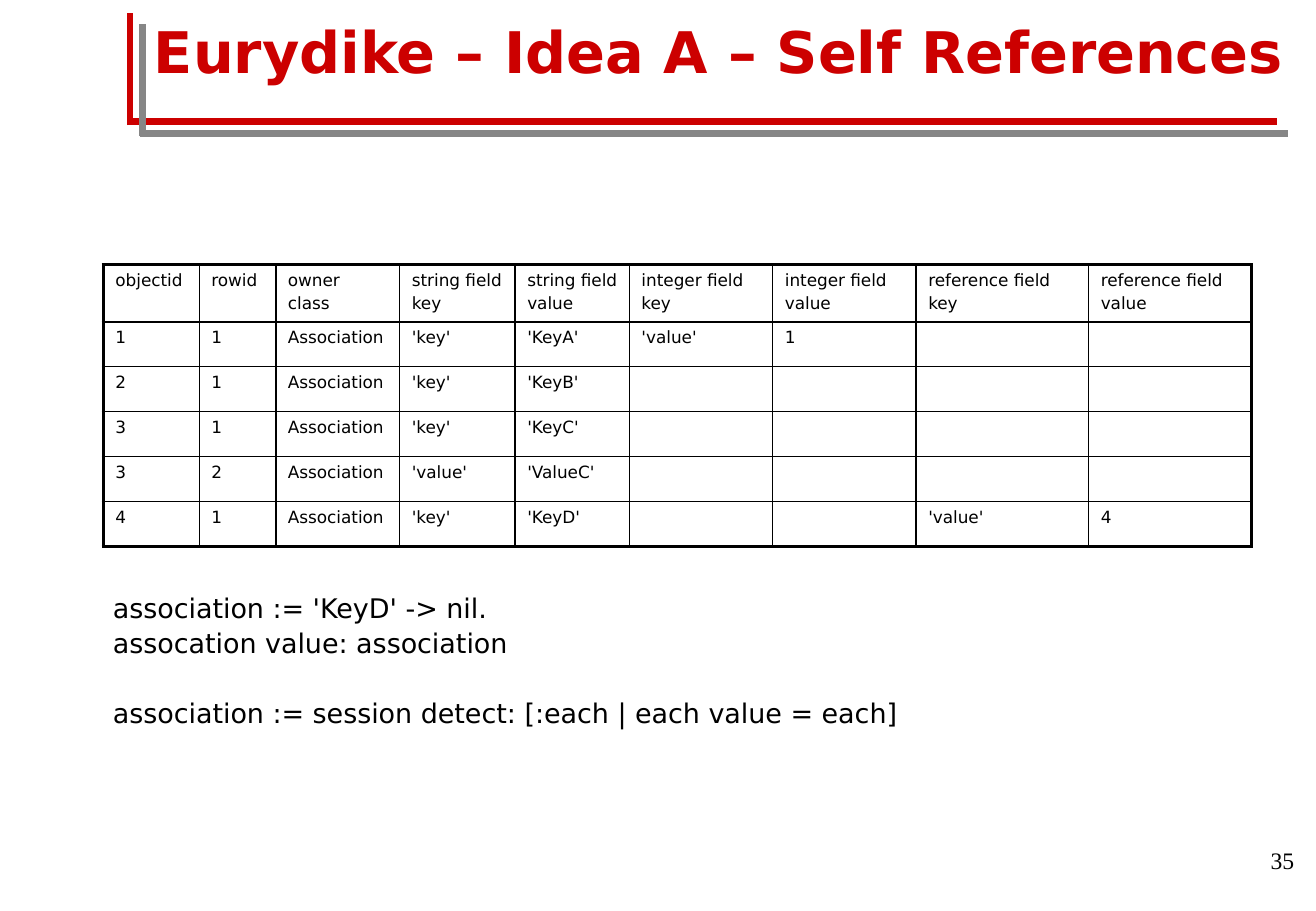
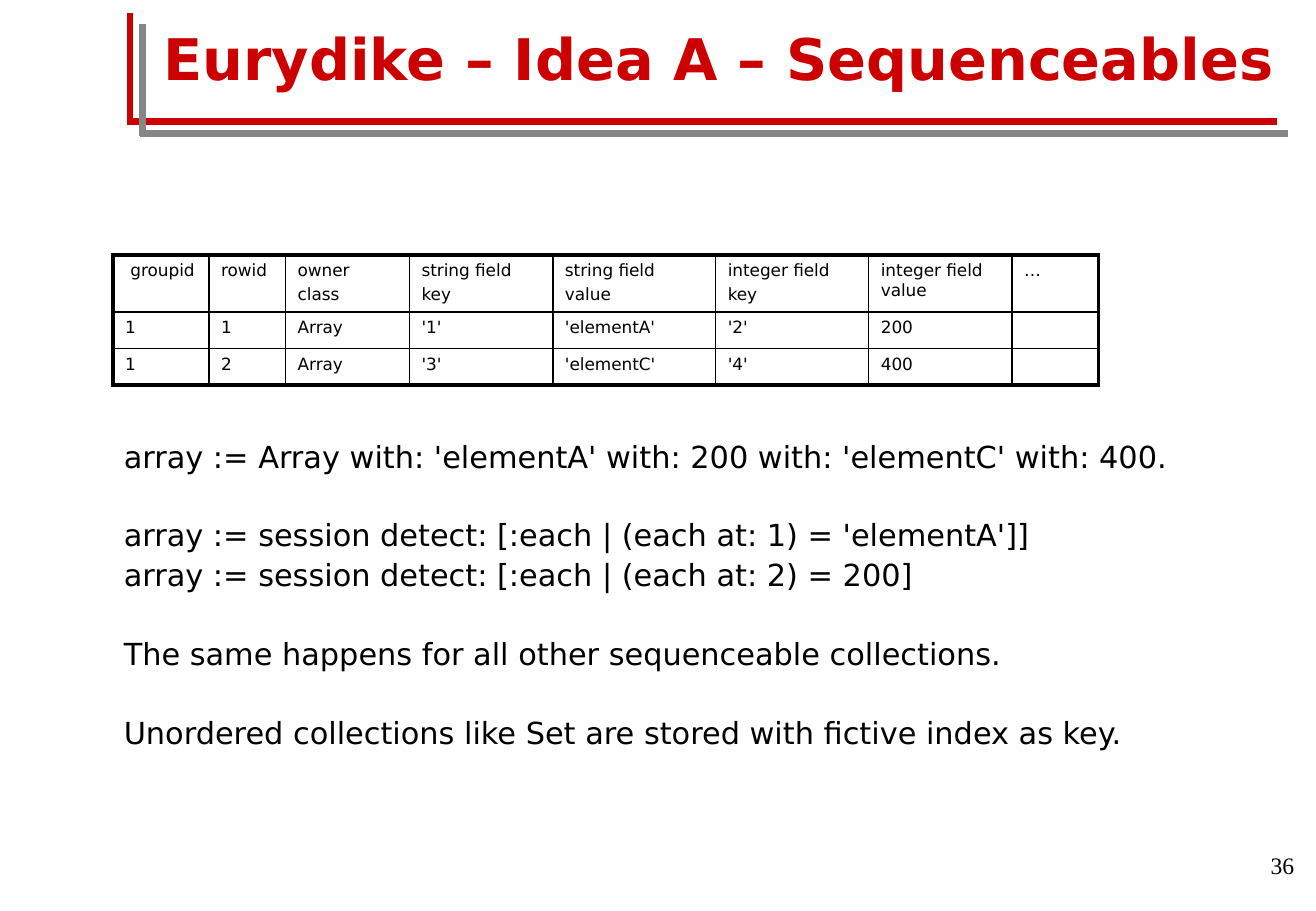
"""Builds two slides on storing object collections in table rows."""
from lxml import etree
from pptx import Presentation
from pptx import util as u
from pptx.dml.color import RGBColor
from pptx.enum import shapes, text
from pptx.oxml.ns import qn

RED = RGBColor(0xCC, 0x00, 0x00)
GRAY = RGBColor(0x86, 0x86, 0x86)
BLACK = RGBColor(0x00, 0x00, 0x00)
SANS, SERIF = "DejaVu Sans", "Times New Roman"
PX_PER_INCH = 100
THICK, THIN = 2.25, 1
LINE_GAP, BLOCK_GAP = 0.23, 1.51
FRAME = [
    (RED, (106, 100), (1051, 100)),
    (RED, (107, 103), (107, 11)),
    (GRAY, (115, 110), (1060, 110)),
    (GRAY, (117, 112), (117, 20)),
]
TITLE = {"name": SANS, "size": u.Pt(34), "bold": True}
NUMBER = {"name": SERIF, "size": u.Pt(14)}
CELL = {"name": SANS, "size": u.Pt(10)}


def px(length):
    return u.Emu(length * u.Inches(1) // PX_PER_INCH)


class Deck:
    def __init__(self, width, height):
        self.prs = Presentation()
        self.prs.slide_width, self.prs.slide_height = px(width), px(height)
        self.slide = None

    def add_slide(self):
        self.slide = self.prs.slides.add_slide(self.prs.slide_layouts[6])
        for color, start, end in FRAME:
            self.line(color, start, end)

    def line(self, color, start, end):
        rule = self.slide.shapes.add_connector(
            shapes.MSO_CONNECTOR.STRAIGHT, *map(px, start + end))
        rule.line.color.rgb = color
        rule.line.width = u.Pt(4)
        etree.SubElement(rule._element.spPr, qn("a:effectLst"))

    def style(self, paragraph, font, color=BLACK):
        for run in paragraph.runs:
            for key, value in font.items():
                setattr(run.font, key, value)
            run.font.color.rgb = color

    def text_frame(self, box, anchor=text.MSO_ANCHOR.TOP):
        frame = self.slide.shapes.add_textbox(*map(px, box)).text_frame
        frame.word_wrap = True
        frame.vertical_anchor = anchor
        return frame

    def label(self, box, words, font, color, align):
        paragraph = self.text_frame(box, text.MSO_ANCHOR.MIDDLE).paragraphs[0]
        paragraph.text = words
        paragraph.alignment = align
        self.style(paragraph, font, color)

    def title(self, top, height, words):
        self.label((100, top, 983, height), words, TITLE, RED, text.PP_ALIGN.CENTER)

    def number(self, top, height, words):
        self.label((849, top, 226, height), words, NUMBER, BLACK, text.PP_ALIGN.RIGHT)

    def body(self, box, size, blocks):
        frame = self.text_frame(box)
        lines = [(words, BLOCK_GAP if i == 0 else LINE_GAP)
                 for block in blocks for i, words in enumerate(block)]
        frame.text = "\n".join(words for words, _ in lines)
        for i, (paragraph, (_, gap)) in enumerate(zip(frame.paragraphs, lines)):
            paragraph.line_spacing = 0.9
            if i:
                paragraph.space_before = u.Pt(size * gap)
            self.style(paragraph, {"name": SANS, "size": u.Pt(size)})

    def border(self, cell, sides):
        for side, width in sides.items():
            edge = etree.SubElement(cell._tc.get_or_add_tcPr(), qn("a:ln" + side),
                                    w=str(u.Pt(width)))
            fill = etree.SubElement(edge, qn("a:solidFill"))
            etree.SubElement(fill, qn("a:srgbClr"), val=str(BLACK))

    def table(self, left, top, widths, heights, rows):
        box = (left, top, sum(widths), sum(heights))
        grid = self.slide.shapes.add_table(
            len(heights), len(widths), *map(px, box)).table
        grid.first_row = grid.horz_banding = False
        for column, width in zip(grid.columns, widths):
            column.width = px(width)
        for row, height in zip(grid.rows, heights):
            row.height = px(height)
        last_row, last_column = len(heights) - 1, len(widths) - 1
        for r, row in enumerate(rows):
            for c, words in enumerate(row):
                cell = grid.cell(r, c)
                self.border(cell, {
                    "L": THICK if c == 0 else THIN,
                    "R": THICK if c == last_column else THIN,
                    "T": THICK if r == 0 else THIN,
                    "B": THICK if r == last_row else THIN,
                })
                cell.fill.background()
                self.fill_cell(cell, words)

    def fill_cell(self, cell, words):
        cell.text = words
        for i, paragraph in enumerate(cell.text_frame.paragraphs):
            if i:
                paragraph.space_before = u.Pt(CELL["size"].pt * LINE_GAP)
            self.style(paragraph, CELL)
            if not words:
                etree.SubElement(paragraph._p, qn("a:endParaRPr"), sz="1000")


def self_references(deck):
    deck.add_slide()
    deck.title(0, 83, "Eurydike – Idea A – Self References")
    deck.body((83, 485, 991, 173), 16, [
        ["association := 'KeyD' -> nil.", "assocation value: association"],
        ["association := session detect: [:each | each value = each]"],
    ])
    deck.number(683, 50, "35")
    deck.table(85, 218, [79, 63, 102, 95, 94, 118, 118, 142, 134], [47] + [37] * 5, [
        ["objectid", "rowid", "owner\nclass", "string field\nkey", "string field\nvalue",
         "integer field\nkey", "integer field\nvalue",
         "reference field\nkey", "reference field\nvalue"],
        ["1", "1", "Association", "'key'", "'KeyA'", "'value'", "1", "", ""],
        ["2", "1", "Association", "'key'", "'KeyB'", "", "", "", ""],
        ["3", "1", "Association", "'key'", "'KeyC'", "", "", "", ""],
        ["3", "2", "Association", "'value'", "'ValueC'", "", "", "", ""],
        ["4", "1", "Association", "'key'", "'KeyD'", "", "", "'value'", "4"],
    ])


def sequenceables(deck):
    deck.add_slide()
    deck.title(12, 71, "Eurydike – Idea A – Sequenceables")
    deck.body((92, 359, 991, 339), 18, [
        ["array := Array with: 'elementA' with: 200 with: 'elementC' with: 400."],
        ["array := session detect: [:each | (each at: 1) = 'elementA']]",
         "array := session detect: [:each | (each at: 2) = 200]"],
        ["The same happens for all other sequenceable collections."],
        ["Unordered collections like Set are stored with fictive index as key."],
    ])
    deck.number(691, 43, "36")
    deck.table(93, 210, [79, 63, 102, 118, 134, 126, 118, 71], [47, 30, 30], [
        [" groupid", "rowid", "owner\nclass", "string field\nkey", "string field\nvalue",
         "integer field\nkey", "integer field value", "…"],
        ["1", "1", "Array", "'1'", "'elementA'", "'2'", "200", ""],
        ["1", "2", "Array", "'3'", "'elementC'", "'4'", "400", ""],
    ])


def main():
    deck = Deck(1083, 750)
    self_references(deck)
    sequenceables(deck)
    deck.prs.save("out.pptx")


if __name__ == "__main__":
    main()
